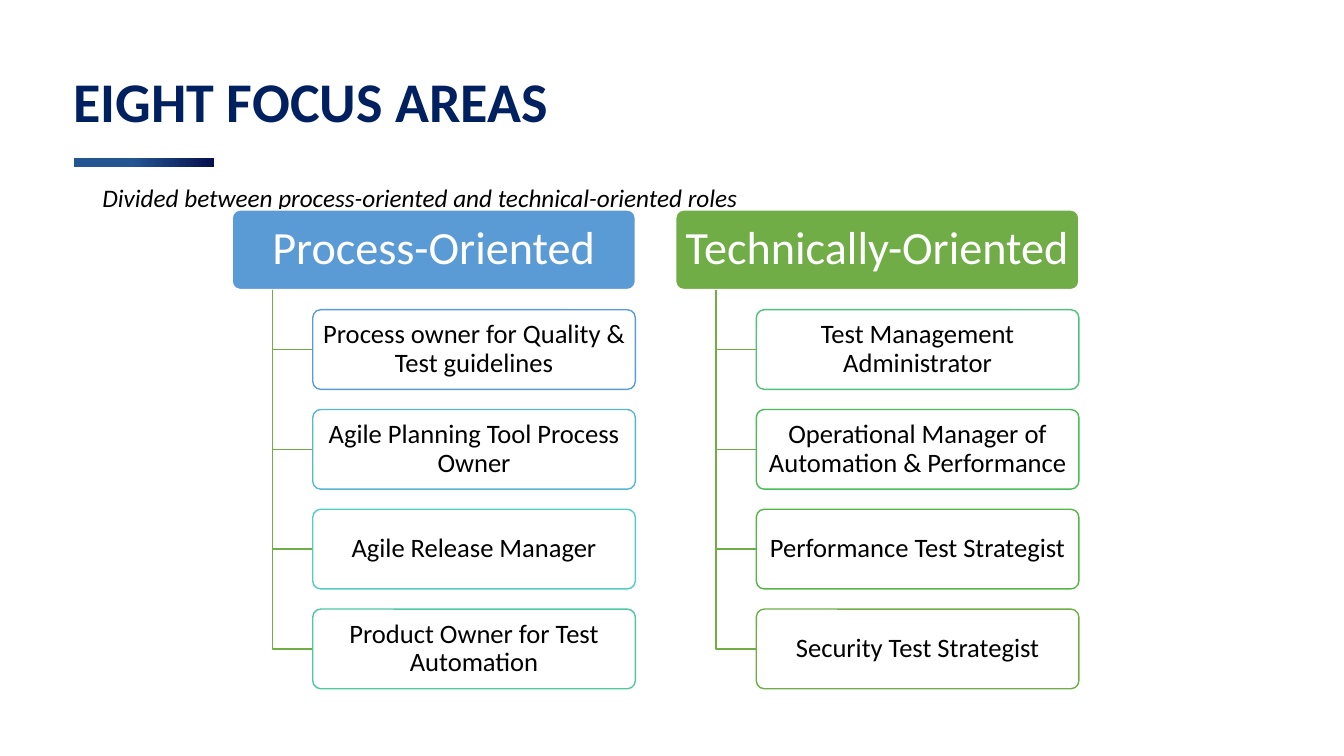
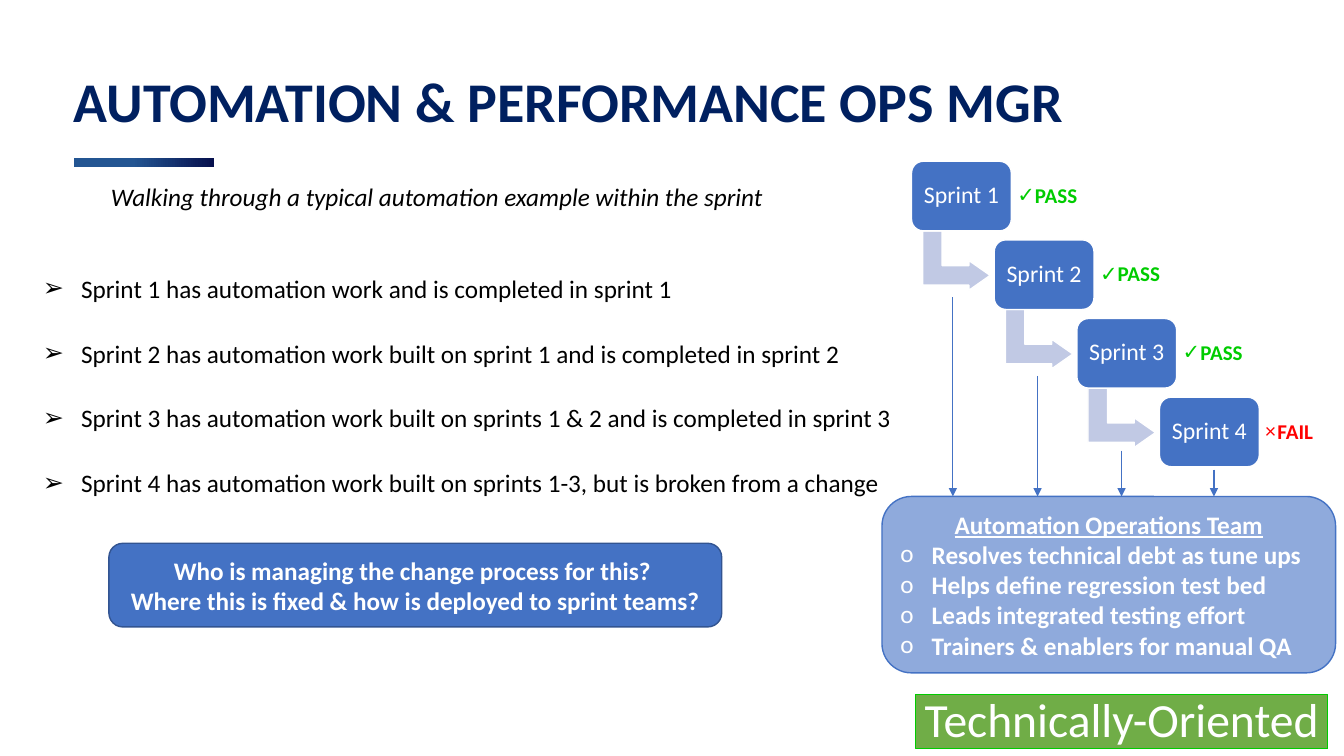
"""Build two slides on test focus areas and the automation operations role."""
from dataclasses import dataclass, replace

from pptx import Presentation
from pptx import util as u
from pptx.dml.color import RGBColor
from pptx.enum import shapes, text
from pptx.oxml import ns, xmlchemy

COLS, ROWS = 40, 30
WIDTH, HEIGHT = u.Inches(13.33), u.Inches(7.5)
SHAPE = shapes.MSO_SHAPE
CENTER = text.PP_ALIGN.CENTER
MIDDLE, TOP = text.MSO_ANCHOR.MIDDLE, text.MSO_ANCHOR.TOP


@dataclass(frozen=True)
class Style:
    size: float
    color: str
    bold: bool = False
    italic: bool = False
    underline: bool = False
    align: object = None
    spacing: float = 1.0
    before: float = 0


@dataclass(frozen=True)
class Theme:
    font: str = "Calibri"
    white: str = "FFFFFF"
    blue: str = "4472C4"
    blue_edge: str = "325491"
    sky: str = "8FAADC"
    mist: str = "C1C9E4"
    process: str = "5B9BD5"
    technical: str = "70AD47"
    passed: str = "00CC00"
    failed: str = "FF0000"
    bar: tuple = ((0.42, "235592"), (1, "06104D"))
    title: Style = Style(40, "002060", bold=True, spacing=0.8)
    subtitle: Style = Style(18, "000000", italic=True)
    bullet: Style = Style(18, "000000", spacing=1.07, before=23.2)
    header: Style = Style(33, "FFFFFF", align=CENTER, spacing=0.9)
    role: Style = Style(19, "000000", align=CENTER, spacing=0.9)
    sprint: Style = Style(17, "FFFFFF", align=CENTER, spacing=0.9)
    result: Style = Style(15, "00CC00", bold=True, spacing=0.9)
    panel: Style = Style(18, "FFFFFF", bold=True)


T = Theme()

TREES = [
    ("Process-Oriented", T.process, [
        ("Process owner for Quality & Test guidelines", "5B9BD5"),
        ("Agile Planning Tool Process Owner", "57B7D1"),
        ("Agile Release Manager", "53CCC5"),
        ("Product Owner for Test Automation", "4FC7A0"),
    ]),
    ("Technically-Oriented", T.technical, [
        ("Test Management Administrator", "4CC27B"),
        ("Operational Manager of Automation & Performance", "48BD58"),
        ("Performance Test Strategist", "55B646"),
        ("Security Test Strategist", "70AD47"),
    ]),
]
SPRINT_NOTES = [
    "Sprint 1 has automation work and is completed in sprint 1",
    "Sprint 2 has automation work built on sprint 1 and is completed in sprint 2",
    "Sprint 3 has automation work built on sprints 1 & 2 and is completed in sprint 3",
    "Sprint 4 has automation work built on sprints 1-3, but is broken from a change",
]
RESULTS = [("✓", "PASS", T.passed)] * 3 + [("×", "FAIL", T.failed)]
QUESTIONS = [
    "Who is managing the change process for this? ",
    "Where this is fixed & how is deployed to sprint teams?",
]
DUTIES = [
    "Resolves technical debt as tune ups",
    "Helps define regression test bed",
    "Leads integrated testing effort",
    "Trainers & enablers for manual QA",
]
DROPS = [(28.36, 11.8), (30.88, 14.92), (33.38, 17.88), (36.13, 18.64)]


def x(cols):
    """Convert grid columns to a length."""
    return int(WIDTH * cols / COLS)


def y(rows):
    """Convert grid rows to a length."""
    return int(HEIGHT * rows / ROWS)


def area(col, row, cols, rows):
    """Convert a grid area to left, top, width and height."""
    return x(col), y(row), x(cols), y(rows)


def rgb(value):
    """Make a colour from its hex form."""
    return RGBColor.from_string(value)


def element(tag, **attributes):
    """Make an XML element with attributes."""
    made = xmlchemy.OxmlElement(tag)
    for name, value in attributes.items():
        made.set(name, value)
    return made


def write(tf, line, style, bullet=None, indent=0):
    """Add one paragraph, with an optional bullet and hanging indent."""
    first = not tf.paragraphs[0].runs
    p = tf.paragraphs[0] if first else tf.add_paragraph()
    if bullet:
        pPr = p._p.get_or_add_pPr()
        pPr.set("marL", str(u.Inches(indent)))
        pPr.set("indent", str(-u.Inches(indent)))
        pPr.append(element("a:buFont", typeface=T.font))
        pPr.append(element("a:buChar", char=bullet))
    p.alignment, p.line_spacing = style.align, style.spacing
    if style.before and not first:
        p.space_before = u.Pt(style.before)
    r = p.add_run()
    r.text = line
    r.font.name, r.font.size = T.font, u.Pt(style.size)
    r.font.bold, r.font.italic = style.bold, style.italic
    r.font.underline = style.underline
    r.font.color.rgb = rgb(style.color)


def frame(sp, anchor, inset):
    """Set wrapping, anchor and insets, and return the text frame."""
    tf = sp.text_frame
    tf.word_wrap, tf.vertical_anchor = True, anchor
    tf.margin_left = tf.margin_right = u.Pt(inset)
    tf.margin_top = tf.margin_bottom = u.Pt(min(inset, 3.6))
    return tf


def add_text(s, place, anchor=TOP, inset=0):
    """Add a text box and return its text frame."""
    return frame(s.shapes.add_textbox(*area(*place)), anchor, inset)


def add_box(s, kind, place, fill, line, adjust=(), width=1):
    """Add a filled preset shape without a shadow."""
    sp = s.shapes.add_shape(kind, *area(*place))
    sp.shadow.inherit = False
    sp.fill.solid()
    sp.fill.fore_color.rgb = rgb(fill)
    sp.line.color.rgb = rgb(line)
    sp.line.width = u.Pt(width)
    for i, value in enumerate(adjust):
        sp.adjustments[i] = value
    return sp


def add_arrow(s, start, end, color, width):
    """Add a straight arrow between two grid points."""
    cn = s.shapes.add_connector(
        shapes.MSO_CONNECTOR.STRAIGHT,
        x(start[0]), y(start[1]), x(end[0]), y(end[1]))
    cn.line.color.rgb = rgb(color)
    cn.line.width = u.Pt(width)
    spPr = cn.element.spPr
    spPr.find(ns.qn("a:ln")).append(element("a:tailEnd", type="triangle"))
    spPr.append(element("a:effectLst"))


def add_elbow(s, start, end, color):
    """Add an open outline that runs down and then right."""
    left, top, right, bottom = x(start[0]), y(start[1]), x(end[0]), y(end[1])
    outline = s.shapes.build_freeform(left, top)
    outline.add_line_segments([(left, bottom), (right, bottom)], close=False)
    sp = outline.convert_to_shape()
    sp.shadow.inherit = False
    sp.fill.background()
    sp.line.color.rgb = rgb(color)
    sp.line.width = u.Pt(1)


def add_slide(prs, title):
    """Add a blank slide with the shared title and gradient bar."""
    s = prs.slides.add_slide(prs.slide_layouts[6])
    bar = s.shapes.add_shape(SHAPE.RECTANGLE, *area(2.2, 6.28, 4.17, 0.36))
    bar.shadow.inherit = False
    bar.line.fill.background()
    bar.fill.gradient()
    bar.fill.gradient_angle = 0
    for stop, (position, color) in zip(bar.fill.gradient_stops, T.bar):
        stop.position, stop.color.rgb = position, rgb(color)
    write(add_text(s, (2.19, 1.68, 37.8, 5.08), MIDDLE), title, T.title)
    return s


def add_tree(s, col, row, name, color, roles):
    """Add a header with its roles hanging from elbow lines."""
    height, pitch = 3.16, 3.96
    head = add_box(s, SHAPE.ROUNDED_RECTANGLE, (col, row, 12, height),
                   color, T.white, [0.1])
    write(frame(head, MIDDLE, 4), name, T.header)
    for i, (role, edge) in enumerate(roles, 1):
        top = row + pitch * i
        add_elbow(s, (col + 1.2, row + height),
                  (col + 2.4, top + height / 2), T.technical)
        sp = add_box(s, SHAPE.ROUNDED_RECTANGLE, (col + 2.4, top, 9.6, height),
                     T.white, edge, [0.1])
        write(frame(sp, MIDDLE, 4), role, T.role)


def add_sprint(s, i, mark, result, color, turn):
    """Add one step of the sprint staircase with its result."""
    col, row = 27.13 + 2.46 * i, 6.4 + 3.12 * i
    if turn:
        arrow = add_box(s, SHAPE.BENT_UP_ARROW, (col + 0.45, row + 2.6, 1.77, 2.68),
                        T.mist, T.white, [0.328, 0.25, 0.358])
        arrow.rotation = 90
    sp = add_box(s, SHAPE.ROUNDED_RECTANGLE, (col, row, 2.97, 2.76),
                 T.blue, T.white, [0.167])
    write(frame(sp, MIDDLE, 4), f"Sprint {i + 1}", T.sprint)
    tf = add_text(s, (col + 2.97, row + 0.28, 2.16, 2.24), MIDDLE, 4.3)
    write(tf, result, replace(T.result, color=color), mark, 0.12)


def focus_areas(prs):
    """Build the slide of eight focus areas."""
    s = add_slide(prs, "EIGHT FOCUS AREAS")
    write(add_text(s, (3.05, 7.24, 34, 1.4)),
          "Divided between process-oriented and technical-oriented roles",
          T.subtitle)
    for i, tree in enumerate(TREES):
        add_tree(s, 6.91 + 13.2 * i, 8.33, *tree)


def automation_ops(prs):
    """Build the slide of the sprint automation example."""
    s = add_slide(prs, "AUTOMATION & PERFORMANCE OPS MGR")
    write(add_text(s, (3.3, 7.32, 23, 1.28)),
          "Walking through a typical automation example within the sprint",
          replace(T.subtitle, spacing=0.9))
    tf = add_text(s, (0.98, 10.56, 29, 9.48), inset=7.2)
    for note in SPRINT_NOTES:
        write(tf, note, T.bullet, "➢", 0.38)
    for i, outcome in enumerate(RESULTS):
        add_sprint(s, i, *outcome, turn=i < len(RESULTS) - 1)

    callout = add_box(s, SHAPE.ROUNDED_RECTANGLE, (3.24, 21.56, 18.24, 3.32),
                      T.blue, T.blue_edge)
    tf = frame(callout, MIDDLE, 7.2)
    for question in QUESTIONS:
        write(tf, question, replace(T.panel, align=CENTER))

    team = add_box(s, SHAPE.ROUNDED_RECTANGLE, (26.25, 19.7, 13.5, 7),
                   T.sky, T.blue)
    tf = frame(team, MIDDLE, 7.2)
    write(tf, "Automation Operations Team",
          replace(T.panel, align=CENTER, underline=True))
    for duty in DUTIES:
        write(tf, duty, replace(T.panel, align=text.PP_ALIGN.LEFT), "o", 0.31)
    for col, row in DROPS:
        add_arrow(s, (col, row), (col, 19.7), T.blue, 0.85)

    tag = add_box(s, SHAPE.RECTANGLE, (27.25, 27.56, 12.27, 2.16),
                  T.technical, T.passed, width=0.75)
    write(frame(tag, MIDDLE, 4), "Technically-Oriented", replace(T.header, size=34))


def main():
    """Build and save the presentation."""
    prs = Presentation()
    prs.slide_width, prs.slide_height = WIDTH, HEIGHT
    focus_areas(prs)
    automation_ops(prs)
    prs.save("out.pptx")


if __name__ == "__main__":
    main()
